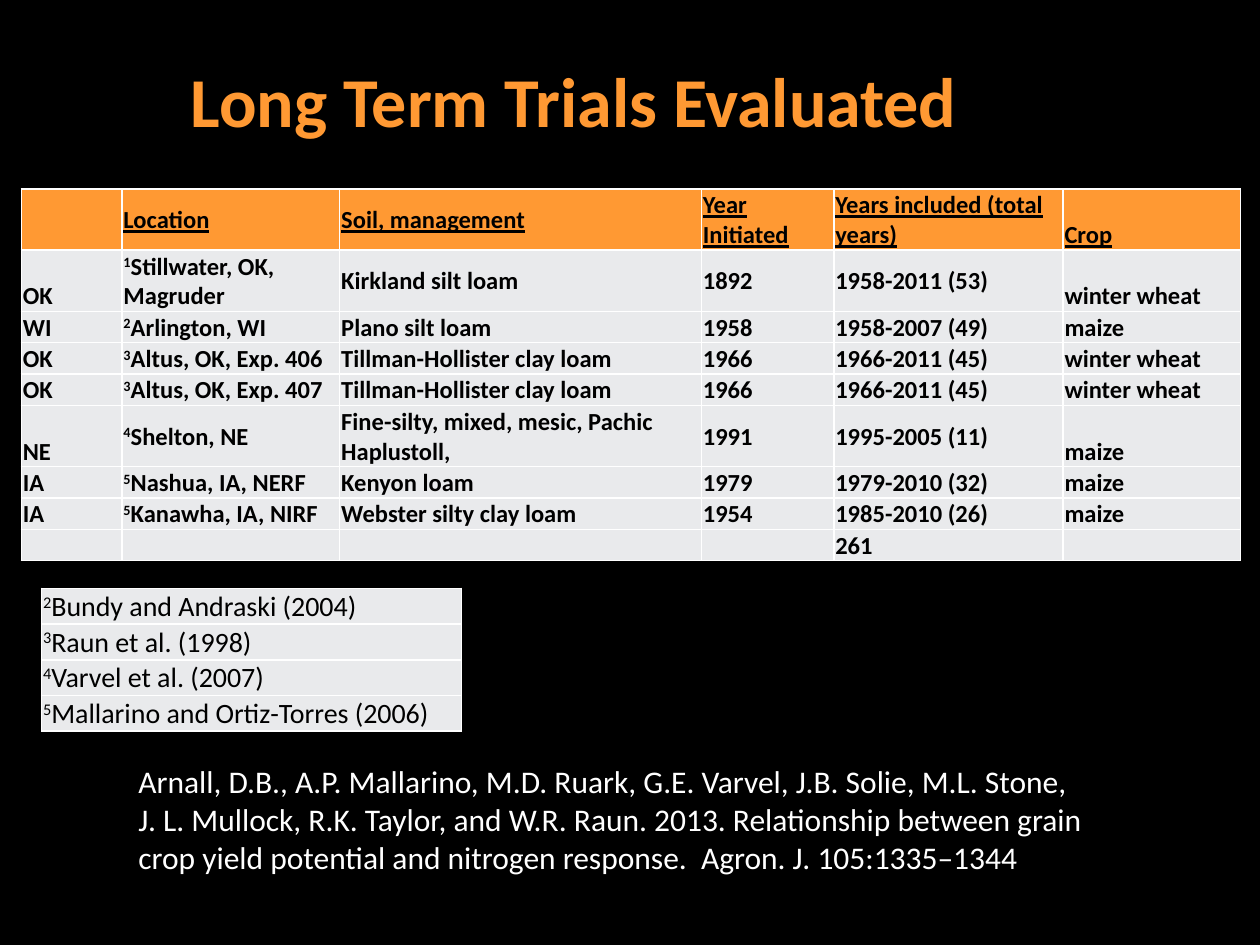
from lxml import etree
from pptx import Presentation
from pptx.dml.color import RGBColor
from pptx.enum.text import MSO_ANCHOR
from pptx.oxml.ns import qn
from pptx.util import Cm, Pt

TOP = MSO_ANCHOR.TOP
MIDDLE = MSO_ANCHOR.MIDDLE
BOTTOM = MSO_ANCHOR.BOTTOM

BLACK = "000000"
WHITE = "FFFFFF"
ORANGE = "FF9933"
PALE_GRAY = "E9EAEC"

TRIAL_WIDTHS = [2.03, 4.39, 7.29, 2.67, 4.62, 3.58]
TRIAL_HEIGHTS = [1.23, 1.23, 0.62, 0.62, 0.62, 1.23, 0.62, 0.62, 0.62]
TRIALS = [
    ["", "Location", "Soil, management", "Year Initiated",
     "Years included (total years)", "Crop"],
    ["OK", ("1", "Stillwater, OK, Magruder"), "Kirkland silt loam", "1892",
     "1958-2011 (53)", "winter wheat"],
    ["WI", ("2", "Arlington, WI"), "Plano silt loam", "1958",
     "1958-2007 (49)", "maize"],
    ["OK", ("3", "Altus, OK, Exp. 406"), "Tillman-Hollister clay loam", "1966",
     "1966-2011 (45)", "winter wheat"],
    ["OK", ("3", "Altus, OK, Exp. 407"), "Tillman-Hollister clay loam", "1966",
     "1966-2011 (45)", "winter wheat"],
    ["NE", ("4", "Shelton, NE"), "Fine-silty, mixed, mesic, Pachic Haplustoll,",
     "1991", "1995-2005 (11)", "maize"],
    ["IA", ("5", "Nashua, IA, NERF"), "Kenyon loam", "1979",
     "1979-2010 (32)", "maize"],
    ["IA", ("5", "Kanawha, IA, NIRF"), "Webster silty clay loam", "1954",
     "1985-2010 (26)", "maize"],
    ["", "", "", "", "261", ""],
]
REFERENCES = [
    [("2", "Bundy and Andraski (2004)")],
    [("3", "Raun et al. (1998)")],
    [("4", "Varvel et al. (2007)")],
    [("5", "Mallarino and Ortiz-Torres (2006)")],
]
CITATION = (
    "Arnall, D.B., A.P. Mallarino, M.D. Ruark, G.E. Varvel, J.B. Solie, "
    "M.L. Stone, J. L. Mullock, R.K. Taylor, and W.R. Raun. 2013. "
    "Relationship between grain crop yield potential and nitrogen response.  "
    "Agron. J. 105:1335–1344"
)


def color(value):
    return RGBColor.from_string(value)


def format_font(font, size, value, bold=False, underline=False):
    font.name = "Calibri"
    font.size = Pt(size)
    font.bold = bold
    font.underline = underline
    font.color.rgb = color(value)


def add_text(slide, text, left, top, width, height, size, value,
             bold=False, anchor=TOP, space_before=0):
    shape = slide.shapes.add_textbox(Cm(left), Cm(top), Cm(width), Cm(height))
    text_frame = shape.text_frame
    text_frame.word_wrap = True
    text_frame.vertical_anchor = anchor
    text_frame.text = text
    paragraph = text_frame.paragraphs[0]
    paragraph.space_before = Pt(space_before)
    format_font(paragraph.runs[0].font, size, value, bold)


def add_borders(cell):
    properties = cell._tc.get_or_add_tcPr()
    for side in ("lnL", "lnR", "lnT", "lnB"):
        line = etree.SubElement(properties, qn(f"a:{side}"), w=str(Pt(1)))
        fill = etree.SubElement(line, qn("a:solidFill"))
        etree.SubElement(fill, qn("a:srgbClr"), val=WHITE)


def fill_cell(cell, content, fill, anchor, size, bold, underline):
    add_borders(cell)
    cell.fill.solid()
    cell.fill.fore_color.rgb = color(fill)
    cell.vertical_anchor = anchor
    cell.margin_left = cell.margin_right = cell.margin_top = Cm(0.03)
    cell.margin_bottom = 0
    note, text = content if isinstance(content, tuple) else ("", content)
    paragraph = cell.text_frame.paragraphs[0]
    format_font(paragraph.font, size, BLACK, bold)
    for part, raised in ((note, True), (text, False)):
        if part:
            run = paragraph.add_run()
            run.text = part
            format_font(run.font, size, BLACK, bold, underline)
            if raised:
                run._r.get_or_add_rPr().set("baseline", "30000")


def add_grid(slide, rows, left, top, widths, heights, size, is_bottom,
             bold=False, header=False):
    shape = slide.shapes.add_table(
        len(rows), len(widths), Cm(left), Cm(top),
        Cm(sum(widths)), Cm(sum(heights)))
    table = shape.table
    table.first_row = header
    table.horz_banding = False
    for column, width in zip(table.columns, widths):
        column.width = Cm(width)
    for row, height in zip(table.rows, heights):
        row.height = Cm(height)
    for row_index, row in enumerate(rows):
        heading = header and row_index == 0
        fill = ORANGE if heading else PALE_GRAY
        for column_index, content in enumerate(row):
            anchor = BOTTOM if is_bottom(row_index, column_index) else MIDDLE
            fill_cell(table.cell(row_index, column_index), content, fill,
                      anchor, size, bold, heading)


def main():
    presentation = Presentation()
    presentation.slide_width = Cm(25.4)
    presentation.slide_height = Cm(19.05)
    slide = presentation.slides.add_slide(presentation.slide_layouts[6])
    slide.background.fill.solid()
    slide.background.fill.fore_color.rgb = color(BLACK)

    add_grid(slide, TRIALS, 0.43, 3.81, TRIAL_WIDTHS, TRIAL_HEIGHTS, 14,
             lambda row, column: column in (0, 5) or row >= 6,
             bold=True, header=True)
    add_text(slide, "Long Term Trials Evaluated", 3.6, 0.43, 21.34, 2.54,
             40, ORANGE, bold=True, anchor=BOTTOM, space_before=4)
    add_grid(slide, REFERENCES, 0.84, 11.86, [8.46], [0.72] * len(REFERENCES),
             16, lambda row, column: row % 2 == 1)
    add_text(slide, CITATION, 2.54, 15.24, 19.69, 2.57, 18, WHITE)

    presentation.save("out.pptx")


if __name__ == "__main__":
    main()
